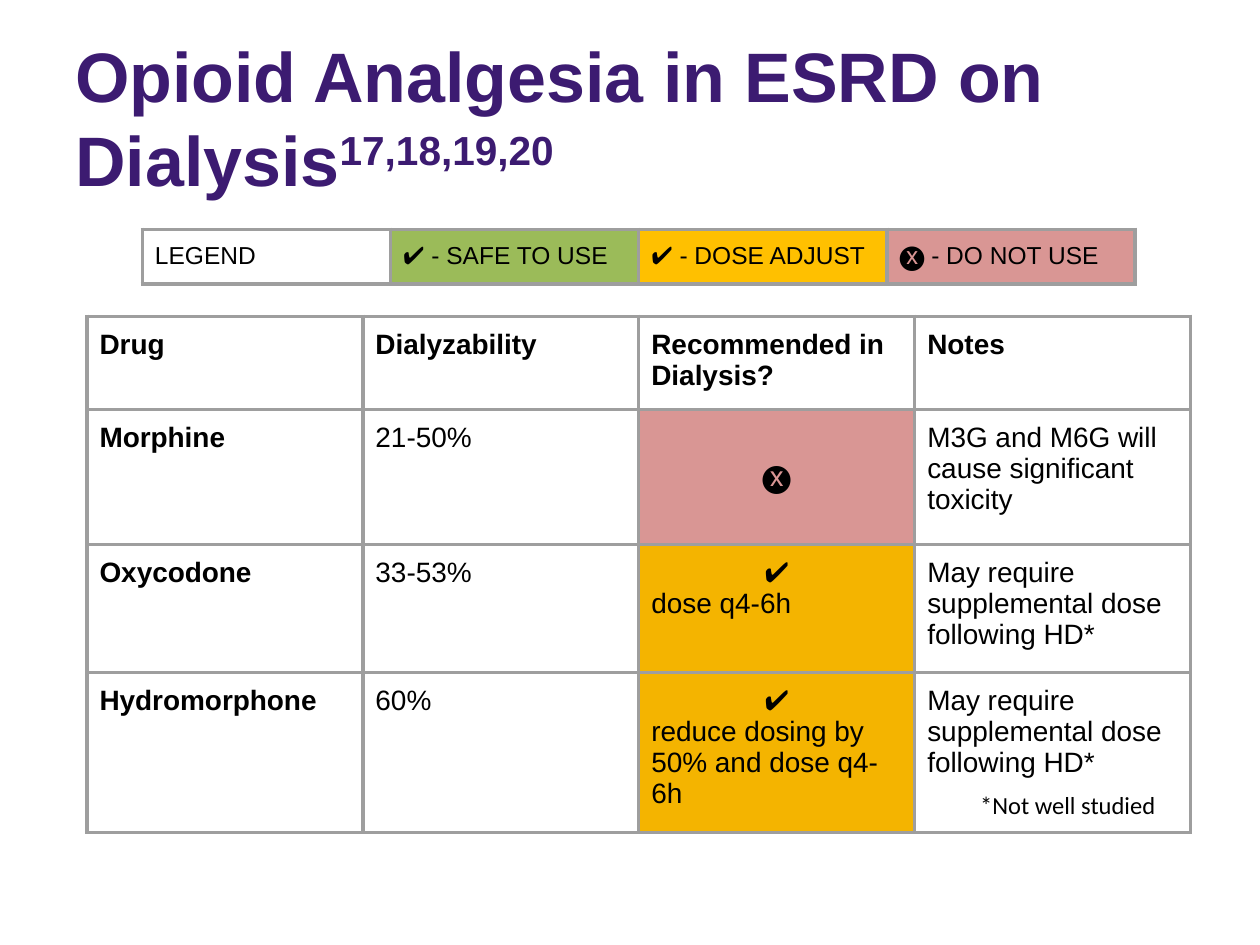
from lxml import etree
from pptx import Presentation, util as u
from pptx.dml.color import RGBColor
from pptx.enum import text
from pptx.oxml.ns import qn

COLORS = {
    "title": "3C1B71", "text": "000000", "border": "9E9E9E", "safe": "9BBB59",
    "legend_adjust": "FFC000", "adjust": "F4B400", "avoid": "D99694",
}
MARGIN = u.Inches(0.1)


def style(p, size, color="text", bold=False, font="Arial"):
    for r in p.runs:
        r.font.name, r.font.size, r.font.bold = font, u.Pt(size), bold
        r.font.color.rgb = RGBColor.from_string(COLORS[color])


def add_grid(s, left, top, col_width, row_heights, rows, size, fills, is_bold):
    """Add a bordered table; fills maps (row, column) to a colour name."""
    n_cols = len(rows[0])
    tbl = s.shapes.add_table(len(rows), n_cols, u.Inches(left), u.Inches(top),
                             u.Inches(col_width * n_cols), u.Inches(sum(row_heights))).table
    tbl.first_row = tbl.horz_banding = False
    for col in tbl.columns:
        col.width = u.Inches(col_width)
    for i, row in enumerate(rows):
        tbl.rows[i].height = u.Inches(row_heights[i])
        for j, content in enumerate(row):
            cell = tbl.cell(i, j)
            cell.margin_left = cell.margin_right = MARGIN
            cell.margin_top = cell.margin_bottom = MARGIN
            cell.text_frame.text = content
            for p in cell.text_frame.paragraphs:
                style(p, size, bold=is_bold(i, j))
                if p.text in ("✔", "🅧"):
                    p.alignment = text.PP_ALIGN.CENTER
            tcPr = cell._tc.get_or_add_tcPr()
            for side in ("a:lnL", "a:lnR", "a:lnT", "a:lnB"):
                ln = etree.SubElement(tcPr, qn(side), w=str(u.Pt(2.25)))
                fill = etree.SubElement(ln, qn("a:solidFill"))
                etree.SubElement(fill, qn("a:srgbClr"), val=COLORS["border"])
            if (i, j) in fills:
                cell.fill.solid()
                cell.fill.fore_color.rgb = RGBColor.from_string(COLORS[fills[i, j]])
            else:
                cell.fill.background()
    return tbl


prs = Presentation()
prs.slide_width, prs.slide_height = u.Inches(10), u.Inches(7.5)
s = prs.slides.add_slide(prs.slide_layouts[6])

# Title with superscript references
tf = s.shapes.add_textbox(u.Inches(0.5), u.Inches(0.3), u.Inches(9), u.Inches(1.25)).text_frame
tf.word_wrap = True
tf.vertical_anchor = text.MSO_ANCHOR.MIDDLE
p = tf.paragraphs[0]
p.space_after = u.Pt(12)
for part in ("Opioid Analgesia in ESRD on Dialysis", "17,18,19,20"):
    p.add_run().text = part
style(p, 40, "title", bold=True)
p.runs[1].font._element.set("baseline", "30000")

# Drug table
drugs = [
    ["Drug", "Dialyzability", "Recommended in Dialysis?", "Notes"],
    ["Morphine", "21-50%", "🅧", "M3G and M6G will cause significant toxicity"],
    ["Oxycodone", "33-53%", "✔\ndose q4-6h", "May require supplemental dose following HD*"],
    ["Hydromorphone", "60%", "✔\nreduce dosing by 50% and dose q4-6h",
     "May require supplemental dose following HD*"],
]
tbl = add_grid(s, 0.69, 2.51, 2.19, [0.74, 1.07, 1.02, 1.11], drugs, 16,
               {(1, 2): "avoid", (2, 2): "adjust", (3, 2): "adjust"},
               lambda i, j: i == 0 or j == 0)
tbl.cell(1, 2).vertical_anchor = text.MSO_ANCHOR.MIDDLE

# Footnote
tf = s.shapes.add_textbox(u.Inches(7.68), u.Inches(6.17), u.Inches(1.69), u.Inches(0.48)).text_frame
tf.word_wrap = True
tf.margin_left = tf.margin_right = tf.margin_top = tf.margin_bottom = MARGIN
tf.text = "*Not well studied"
style(tf.paragraphs[0], 14, font="Calibri")

# Legend
legend = [["LEGEND", "✔ - SAFE TO USE", "✔ - DOSE ADJUST", "🅧 - DO NOT USE"]]
add_grid(s, 1.13, 1.82, 1.97, [0.43], legend, 14,
         {(0, 1): "safe", (0, 2): "legend_adjust", (0, 3): "avoid"},
         lambda i, j: False)

prs.save("out.pptx")
